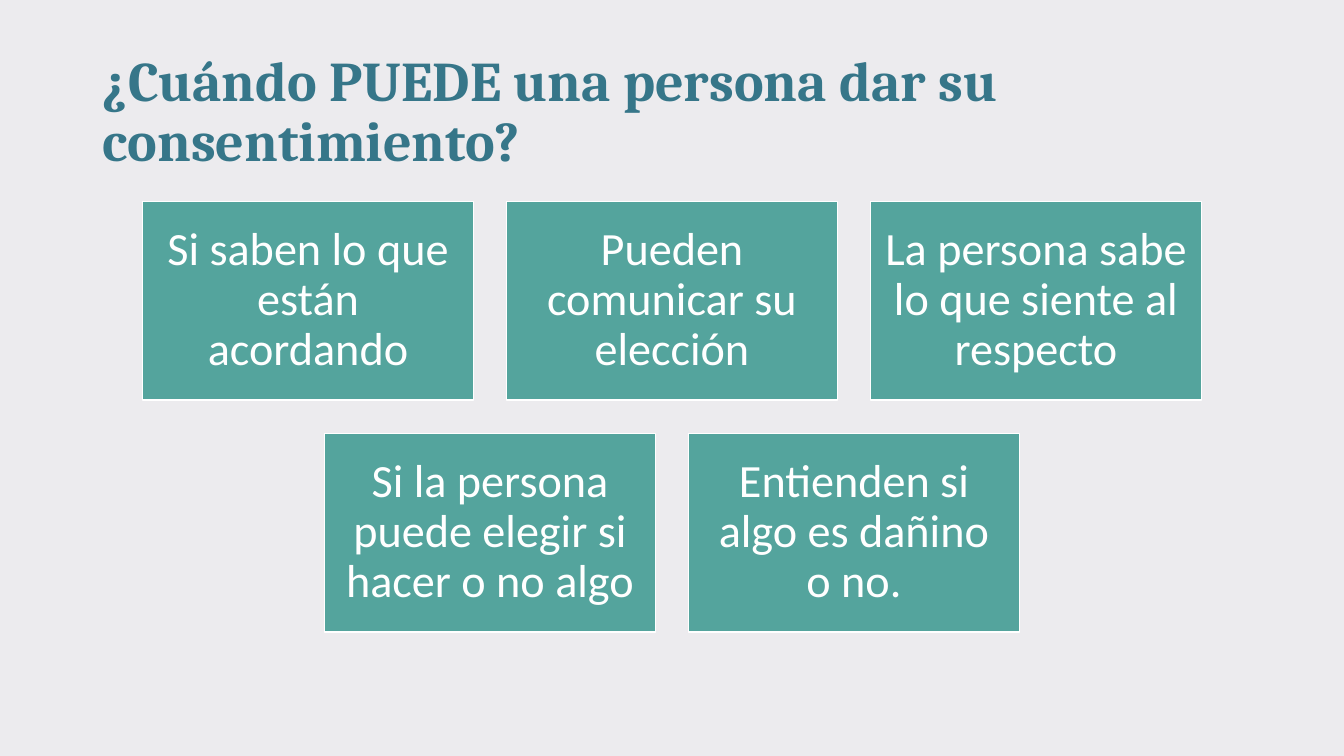
from dataclasses import dataclass

from pptx import Presentation
from pptx.dml.color import RGBColor
from pptx.enum.shapes import MSO_SHAPE
from pptx.enum.text import MSO_ANCHOR, MSO_AUTO_SIZE, PP_ALIGN
from pptx.util import Inches, Pt


@dataclass(frozen=True)
class Theme:
    """Colours, fonts and type sizes of the slide."""
    background: RGBColor = RGBColor.from_string("ECEBEE")
    heading: RGBColor = RGBColor.from_string("367689")
    card: RGBColor = RGBColor.from_string("54A49D")
    white: RGBColor = RGBColor.from_string("FFFFFF")
    heading_font: str = "Cambria"
    card_font: str = "Calibri"
    heading_size: Pt = Pt(40)
    card_size: Pt = Pt(33)
    outline: Pt = Pt(1)


THEME = Theme()
SLIDE_WIDTH, SLIDE_HEIGHT = 13.33, 7.5
CARD_WIDTH, CARD_HEIGHT, GAP, FIRST_TOP = 3.28, 1.97, 0.33, 2.0
CARD_INSET = Inches(0.14)
QUESTION = "¿Cuándo PUEDE una persona dar su consentimiento?"
CONDITION_ROWS = [
    ["Si saben lo que están acordando",
     "Pueden comunicar su elección",
     "La persona sabe lo que siente al respecto"],
    ["Si la persona puede elegir si hacer o no algo",
     "Entienden si algo es dañino o no."],
]


def apply_format(target, values):
    """Set each named attribute on the target."""
    for name, value in values.items():
        setattr(target, name, value)


def write_text(frame, text, alignment, font, color):
    """Write one formatted, vertically centred paragraph."""
    apply_format(frame, {"word_wrap": True, "auto_size": MSO_AUTO_SIZE.NONE,
                         "vertical_anchor": MSO_ANCHOR.MIDDLE})
    paragraph = frame.paragraphs[0]
    apply_format(paragraph, {"alignment": alignment, "line_spacing": 0.9})
    run = paragraph.add_run()
    run.text = text
    apply_format(run.font, font)
    run.font.color.rgb = color


def add_question(slide):
    """Place the question in the title placeholder."""
    title = slide.shapes.title
    apply_format(title, {"left": Inches(0.92), "top": Inches(0.4),
                         "width": Inches(11.68), "height": Inches(1.45)})
    write_text(title.text_frame, QUESTION, PP_ALIGN.LEFT,
               {"name": THEME.heading_font, "size": THEME.heading_size, "bold": True},
               THEME.heading)


def add_condition(slide, left, top, text):
    """Add one condition card."""
    card = slide.shapes.add_shape(MSO_SHAPE.RECTANGLE, Inches(left), Inches(top),
                                  Inches(CARD_WIDTH), Inches(CARD_HEIGHT))
    card.shadow.inherit = False
    card.fill.solid()
    card.fill.fore_color.rgb = THEME.card
    card.line.color.rgb = THEME.white
    card.line.width = THEME.outline
    sides = ("left", "top", "right", "bottom")
    apply_format(card.text_frame, {f"margin_{side}": CARD_INSET for side in sides})
    write_text(card.text_frame, text, PP_ALIGN.CENTER,
               {"name": THEME.card_font, "size": THEME.card_size}, THEME.white)


def add_condition_rows(slide):
    """Lay out the cards in rows centred on the slide."""
    for row, conditions in enumerate(CONDITION_ROWS):
        row_width = len(conditions) * (CARD_WIDTH + GAP) - GAP
        row_left = (SLIDE_WIDTH - row_width) / 2
        top = FIRST_TOP + row * (CARD_HEIGHT + GAP)
        for column, text in enumerate(conditions):
            add_condition(slide, row_left + column * (CARD_WIDTH + GAP), top, text)


def main():
    """Build and save the slide."""
    deck = Presentation()
    apply_format(deck, {"slide_width": Inches(SLIDE_WIDTH),
                        "slide_height": Inches(SLIDE_HEIGHT)})
    slide = deck.slides.add_slide(deck.slide_layouts.get_by_name("Title Only"))
    slide.background.fill.solid()
    slide.background.fill.fore_color.rgb = THEME.background
    add_question(slide)
    add_condition_rows(slide)
    deck.save("out.pptx")


if __name__ == "__main__":
    main()
